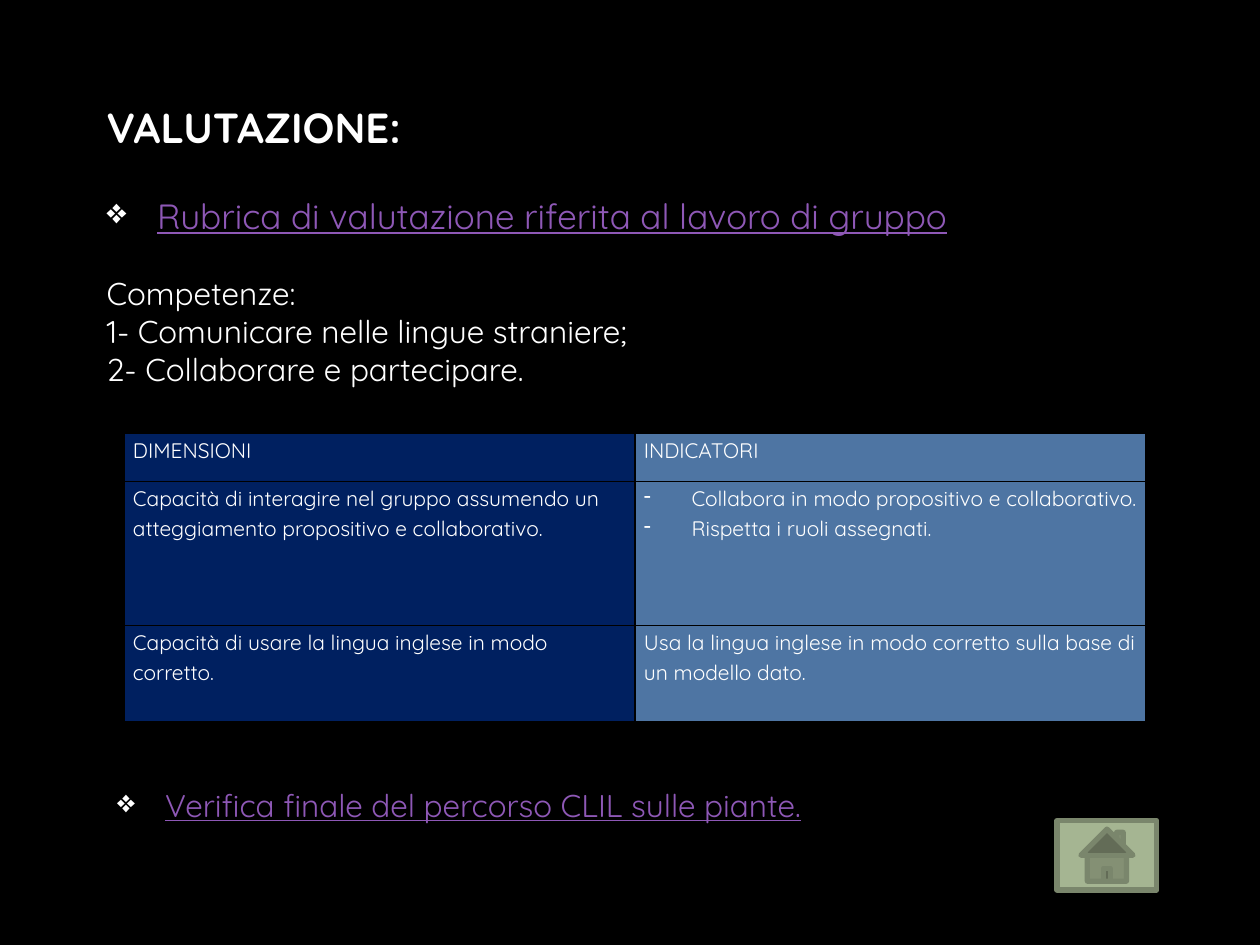
import pptx
import pptx.dml.color
import pptx.enum.shapes
import pptx.oxml
import pptx.oxml.ns
import pptx.util

Cm = pptx.util.Cm
Pt = pptx.util.Pt

THEME = {
    "font": "Quicksand",
    "background": "000000",
    "text": "FFFFFF",
    "link": "8E58B6",
    "columns": ("002060", "4E75A3"),
    "border": "000000",
    "button": "A5B592",
    "button_line": "7A866C",
    "title": 24,
    "topic": 20,
    "body": 18,
    "cell": 12,
}

# Text, size role, space before in points
INTRODUCTION = [
    ("VALUTAZIONE:", "title", 0),
    ("Rubrica di valutazione riferita al lavoro di gruppo", "topic", 24),
    ("Competenze:", "body", 21.5),
    ("1- Comunicare nelle lingue straniere;", "body", 0),
    ("2- Collaborare e partecipare.", "body", 0),
]
FINAL_TEST = [("Verifica finale del percorso CLIL sulle piante.", "body", 0)]
LINKS = {INTRODUCTION[1][0], FINAL_TEST[0][0]}

# Each cell is a string, or a list of dash items
RUBRIC = [
    ("DIMENSIONI", "INDICATORI"),
    ("Capacità di interagire nel gruppo assumendo un atteggiamento propositivo e collaborativo.",
     ["Collabora in modo propositivo e collaborativo.", "Rispetta i ruoli assegnati."]),
    ("Capacità di usare la lingua inglese in modo corretto.",
     "Usa la lingua inglese in modo corretto sulla base di un modello dato."),
]
COLUMN_WIDTH = 10.3
ROW_HEIGHTS = (0.97, 2.9, 1.93)


def color(value):
    return pptx.dml.color.RGBColor.from_string(value)


def style(paragraph, size):
    paragraph.font.name = THEME["font"]
    paragraph.font.size = Pt(THEME[size])
    paragraph.font.bold = size == "title"
    paragraph.font.color.rgb = color(THEME["text"])


def add_bullet(paragraph, character, indent):
    """Give the paragraph a white bullet and a hanging indent."""
    properties = paragraph._p.get_or_add_pPr()
    properties.set("marL", str(indent))
    properties.set("indent", str(-indent))
    namespace = pptx.oxml.ns.nsdecls("a")
    for element in (
        f'<a:buClr {namespace}><a:srgbClr val="{THEME["text"]}"/></a:buClr>',
        f'<a:buChar {namespace} char="{character}"/>',
    ):
        properties.insert_element_before(
            pptx.oxml.parse_xml(element), "a:tabLst", "a:defRPr", "a:extLst")


def add_text(slide, lines, left, top, width, height, indent):
    frame = slide.shapes.add_textbox(Cm(left), Cm(top), Cm(width), Cm(height)).text_frame
    frame.word_wrap = True
    for index, (text, size, space) in enumerate(lines):
        paragraph = frame.paragraphs[0] if index == 0 else frame.add_paragraph()
        run = paragraph.add_run()
        run.text = text
        paragraph.space_before = Pt(space)
        style(paragraph, size)
        if text in LINKS:
            add_bullet(paragraph, "❖", Cm(indent))
            run.font.underline = True
            run.font.color.rgb = color(THEME["link"])


def add_borders(cell):
    properties = cell._tc.get_or_add_tcPr()
    for index, side in enumerate(("lnL", "lnR", "lnT", "lnB")):
        properties.insert(index, pptx.oxml.parse_xml(
            f'<a:{side} {pptx.oxml.ns.nsdecls("a")} w="{Pt(1)}"><a:solidFill>'
            f'<a:srgbClr val="{THEME["border"]}"/></a:solidFill></a:{side}>'))


def fill_cell(cell, content, fill):
    cell.fill.solid()
    cell.fill.fore_color.rgb = color(fill)
    cell.margin_left = cell.margin_right = Cm(0.18)
    cell.margin_top = cell.margin_bottom = 0
    add_borders(cell)
    is_list = isinstance(content, list)
    for index, text in enumerate(content if is_list else [content]):
        frame = cell.text_frame
        paragraph = frame.paragraphs[0] if index == 0 else frame.add_paragraph()
        paragraph.text = text
        paragraph.line_spacing = 1.15
        style(paragraph, "cell")
        if is_list:
            add_bullet(paragraph, "-", Cm(0.96))


def add_rubric(slide, left, top):
    table = slide.shapes.add_table(
        len(RUBRIC), len(RUBRIC[0]), Cm(left), Cm(top),
        Cm(COLUMN_WIDTH * len(RUBRIC[0])), Cm(sum(ROW_HEIGHTS))).table
    for column in table.columns:
        column.width = Cm(COLUMN_WIDTH)
    for row_index, row in enumerate(RUBRIC):
        table.rows[row_index].height = Cm(ROW_HEIGHTS[row_index])
        for column_index, content in enumerate(row):
            fill_cell(table.cell(row_index, column_index), content,
                      THEME["columns"][column_index])


def add_home_button(slide, left, top, width, height):
    button = slide.shapes.add_shape(
        pptx.enum.shapes.MSO_SHAPE.ACTION_BUTTON_HOME,
        Cm(left), Cm(top), Cm(width), Cm(height))
    button.shadow.inherit = False
    button.fill.solid()
    button.fill.fore_color.rgb = color(THEME["button"])
    button.line.color.rgb = color(THEME["button_line"])
    button.line.width = Pt(3)


def main():
    presentation = pptx.Presentation()
    presentation.slide_width = Cm(25.4)
    presentation.slide_height = Cm(19.05)
    slide = presentation.slides.add_slide(presentation.slide_layouts[6])
    slide.background.fill.solid()
    slide.background.fill.fore_color.rgb = color(THEME["background"])
    add_text(slide, INTRODUCTION, 1.9, 1.93, 20.8, 6.83, indent=1.02)
    add_rubric(slide, 2.5, 8.74)
    add_text(slide, FINAL_TEST, 2.11, 15.72, 15.21, 1.8, indent=0.97)
    add_home_button(slide, 21.31, 16.54, 2.01, 1.4)
    presentation.save("out.pptx")


if __name__ == "__main__":
    main()
